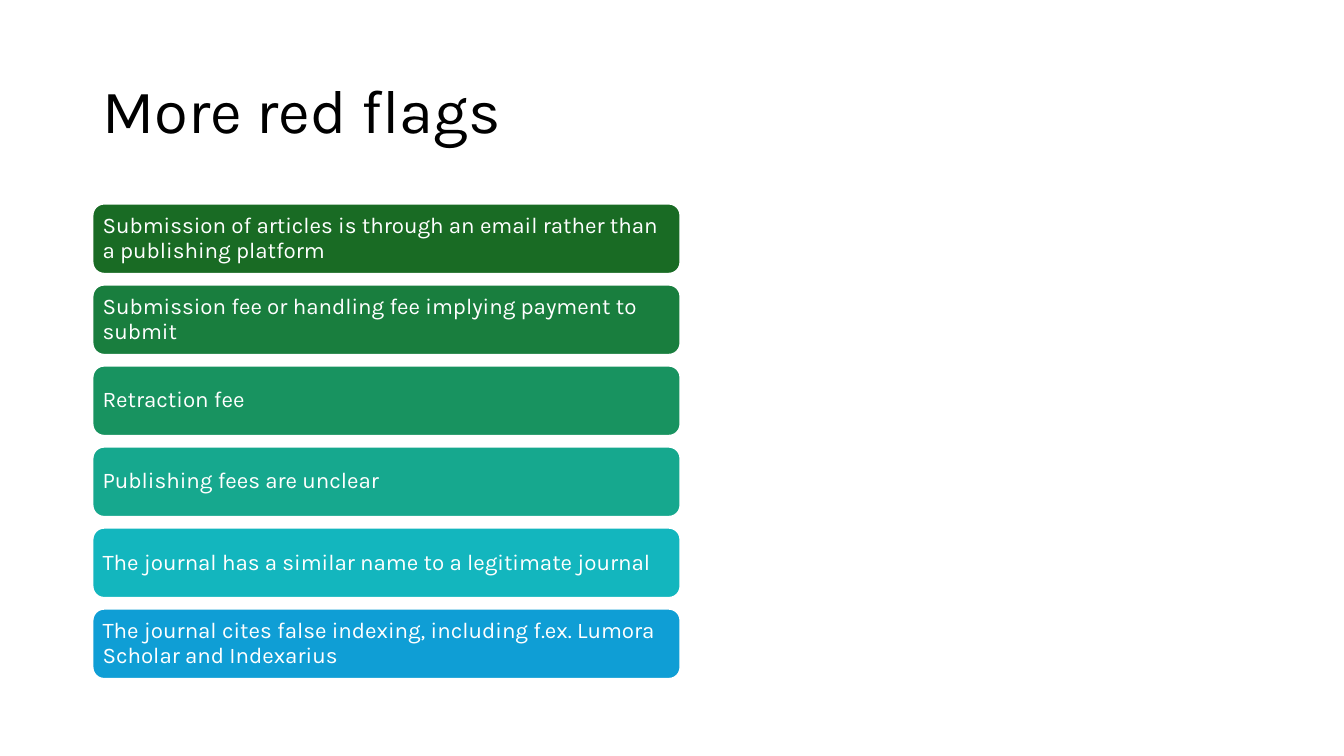
from dataclasses import dataclass

import pptx
import pptx.dml.color
import pptx.enum.shapes
import pptx.enum.text
import pptx.util

Cm = pptx.util.Cm
Pt = pptx.util.Pt


@dataclass(frozen=True)
class Theme:
    font: str = "Karla"
    title_size: int = 44
    flag_size: int = 16
    title_color: str = "000000"
    light: str = "FFFFFF"
    flag_fills: tuple = ("196B24", "197E3E", "189360", "16A88E", "13B6BE", "0F9ED5")


THEME = Theme()

RED_FLAGS = (
    "Submission of articles is through an email rather than a publishing platform",
    "Submission fee or handling fee implying payment to submit",
    "Retraction fee",
    "Publishing fees are unclear",
    "The journal has a similar name to a legitimate journal",
    "The journal cites false indexing, including f.ex. Lumora Scholar and Indexarius",
)


def rgb(color):
    return pptx.dml.color.RGBColor.from_string(color)


def set_text(sp, text, size, color, inset):
    """Fill a shape with one left-aligned, vertically centred paragraph."""
    tf = sp.text_frame
    tf.word_wrap = True
    tf.vertical_anchor = pptx.enum.text.MSO_ANCHOR.MIDDLE
    tf.margin_left = tf.margin_right = inset
    p = tf.paragraphs[0]
    p.text = text
    p.alignment = pptx.enum.text.PP_ALIGN.LEFT
    p.line_spacing = 0.9
    p.font.name = THEME.font
    p.font.size = Pt(size)
    p.font.color.rgb = rgb(color)


def add_title(slide, text, left, top, width, height):
    sp = slide.shapes.add_textbox(left, top, width, height)
    set_text(sp, text, THEME.title_size, THEME.title_color, Cm(0.25))


def add_flag_list(slide, flags, left, top, width, height, gap):
    """Stack equal rounded bars, one per flag, to fill the box."""
    bar_height = (height - gap * (len(flags) - 1)) / len(flags)
    for i, (flag, fill) in enumerate(zip(flags, THEME.flag_fills)):
        sp = slide.shapes.add_shape(
            pptx.enum.shapes.MSO_SHAPE.ROUNDED_RECTANGLE,
            left, round(top + i * (bar_height + gap)), width, round(bar_height))
        sp.shadow.inherit = False
        sp.fill.solid()
        sp.fill.fore_color.rgb = rgb(fill)
        sp.line.color.rgb = rgb(THEME.light)
        sp.line.width = Pt(1.5)
        # The rounded corners add about 0.09 cm to each side margin.
        set_text(sp, flag, THEME.flag_size, THEME.light, Cm(0.17))


def main():
    prs = pptx.Presentation()
    prs.slide_width, prs.slide_height = Cm(33.87), Cm(19.05)
    slide = prs.slides.add_slide(prs.slide_layouts[6])
    left = Cm(2.33)
    add_title(slide, "More red flags", left, Cm(1.01), Cm(29.21), Cm(3.68))
    add_flag_list(slide, RED_FLAGS, left, Cm(5.13), Cm(14.82), Cm(11.98), Cm(0.27))
    prs.save("out.pptx")


if __name__ == "__main__":
    main()
